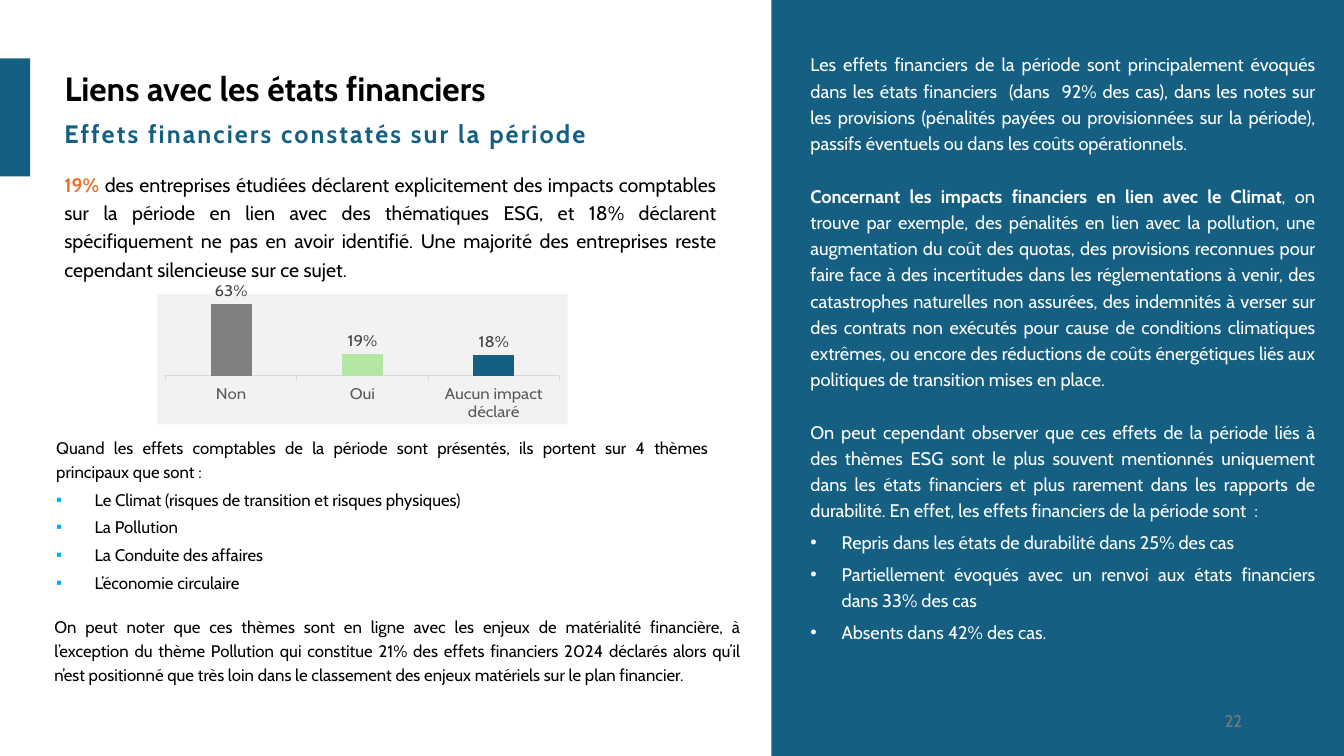
"""Build the slide on financial effects recorded over the period."""
import lxml.etree
import pptx
import pptx.chart.data
import pptx.dml.color
import pptx.enum.chart
import pptx.enum.shapes
import pptx.enum.text
import pptx.oxml
import pptx.oxml.ns
import pptx.util

Inches = pptx.util.Inches
Pt = pptx.util.Pt
Align = pptx.enum.text.PP_ALIGN
qn = pptx.oxml.ns.qn
FONT = "Cabin"
BLUE = "156082"
ORANGE = "E97132"
BLACK = "000000"
WHITE = "FFFFFF"


def paint(target, color):
    """Give a fill or a font a solid colour."""
    if hasattr(target, "solid"):
        target.solid()
        target = target.fore_color
    else:
        target = target.color
    target.rgb = pptx.dml.color.RGBColor.from_string(color)


def write_text(shape, position, paragraphs, size, color, alignment=Align.JUSTIFY,
               bold=False, line_spacing=1.2, indent=0, bullet="•", bullet_color=None,
               lead_color=None):
    """Place a shape and write (lead, body, space after, bulleted) paragraphs."""
    shape.left, shape.top, shape.width, shape.height = map(Inches, position)
    frame = shape.text_frame
    frame.word_wrap = True
    frame.auto_size = pptx.enum.text.MSO_AUTO_SIZE.NONE
    frame.vertical_anchor = pptx.enum.text.MSO_ANCHOR.TOP
    for index, (lead, body, space_after, bulleted) in enumerate(paragraphs):
        paragraph = frame.add_paragraph() if index else frame.paragraphs[0]
        paragraph.alignment = alignment
        paragraph.line_spacing = 1.1 if bulleted and bullet_color else line_spacing
        paragraph.space_before = Pt(0)
        paragraph.space_after = Pt(space_after)
        if bulleted:
            properties = paragraph._p.get_or_add_pPr()
            properties.set("marL", str(Inches(indent)))
            properties.set("indent", str(-Inches(indent)))
            if bullet_color:
                holder = lxml.etree.SubElement(properties, qn("a:buClr"))
                lxml.etree.SubElement(holder, qn("a:srgbClr"), val=bullet_color)
            lxml.etree.SubElement(properties, qn("a:buFont"), typeface="Arial")
            lxml.etree.SubElement(properties, qn("a:buChar"), char=bullet)
        paragraph.font.name = FONT
        paragraph.font.size = Pt(size)
        paragraph.font.bold = bold
        paint(paragraph.font, color)
        if lead:
            run = paragraph.add_run()
            run.text = lead
            run.font.bold = True
            if lead_color:
                paint(run.font, lead_color)
        paragraph.add_run().text = body


presentation = pptx.Presentation()
presentation.slide_width = Inches(13.33)
presentation.slide_height = Inches(7.5)
slide = presentation.slides.add_slide(presentation.slide_layouts[5])

for position in ((0, 0.58, 0.3, 1.17), (7.65, 0, 5.68, 7.5)):
    panel = slide.shapes.add_shape(
        pptx.enum.shapes.MSO_SHAPE.RECTANGLE, *map(Inches, position))
    panel.shadow.inherit = False
    paint(panel.fill, BLUE)
    panel.line.fill.background()

write_text(slide.shapes.title, (0.54, 0.62, 6.01, 0.5),
           [("", "Liens avec les états financiers", 0, False)],
           24, BLACK, Align.LEFT, bold=True, line_spacing=1)

subtitle, page_number, summary, themes, remark, details = [
    slide.shapes.add_textbox(0, 0, 0, 0) for _ in range(6)]

write_text(subtitle, (0.54, 1.12, 6.8, 0.4),
           [("", "Effets financiers constatés sur la période", 0, False)],
           18, BLUE, Align.LEFT, bold=True, line_spacing=1)
subtitle.text_frame.paragraphs[0].runs[0]._r.get_or_add_rPr().set("spc", "150")

write_text(page_number, (9.42, 6.95, 3, 0.4), [("", "22", 0, False)],
           12, "797979", Align.RIGHT, line_spacing=1)
page_number.text_frame.vertical_anchor = pptx.enum.text.MSO_ANCHOR.MIDDLE

write_text(summary, (0.54, 1.62, 6.67, 1.54), [
    ("19% ", "des entreprises étudiées déclarent explicitement des impacts comptables sur la "
     "période en lien avec des thématiques ESG, et 18% déclarent spécifiquement ne pas en avoir "
     "identifié. Une majorité des entreprises reste cependant silencieuse sur ce sujet.",
     0, False)], 14, BLACK, lead_color=ORANGE)

write_text(themes, (0.46, 4.25, 6.67, 1.72), [
    ("", "Quand les effets comptables de la période sont présentés, ils portent sur 4 thèmes "
     "principaux que sont :", 4, False),
    ("", "Le Climat (risques de transition et risques physiques)", 4, True),
    ("", "La Pollution", 4, True),
    ("", "La Conduite des affaires", 4, True),
    ("", "L’économie circulaire", 6, True),
], 12, BLACK, indent=0.38, bullet="▪", bullet_color="00B0F0")

write_text(remark, (0.44, 6.03, 7.01, 1.06), [
    ("", "On peut noter que ces thèmes sont en ligne avec les enjeux de matérialité financière, "
     "à l’exception du thème Pollution qui constitue 21% des effets financiers 2024 déclarés "
     "alors qu’il n’est positionné que très loin dans le classement des enjeux matériels sur le "
     "plan financier.", 0, False)], 12, BLACK)

write_text(details, (7.94, 0.44, 5.2, 6.26), [
    ("", "Les effets financiers de la période sont principalement évoqués dans les états "
     "financiers  (dans  92% des cas), dans les notes sur les provisions (pénalités payées ou "
     "provisionnées sur la période), passifs éventuels ou dans les coûts opérationnels.",
     18.8, False),
    ("Concernant les impacts financiers en lien avec le Climat",
     ", on trouve par exemple, des pénalités en lien avec la pollution, une augmentation du "
     "coût des quotas, des provisions reconnues pour faire face à des incertitudes dans les "
     "réglementations à venir, des catastrophes naturelles non assurées, des indemnités à "
     "verser sur des contrats non exécutés pour cause de conditions climatiques extrêmes, ou "
     "encore des réductions de coûts énergétiques liés aux politiques de transition mises en "
     "place.", 18.8, False),
    ("", "On peut cependant observer que ces effets de la période liés à des thèmes ESG sont le "
     "plus souvent mentionnés uniquement dans les états financiers et plus rarement dans les "
     "rapports de durabilité. En effet, les effets financiers de la période sont  :", 4, False),
    ("", "Repris dans les états de durabilité dans 25% des cas", 4, True),
    ("", "Partiellement évoqués avec un renvoi aux états financiers dans 33% des cas", 4, True),
    ("", "Absents dans 42% des cas.", 0, True),
], 13, WHITE, indent=0.31)

chart_data = pptx.chart.data.CategoryChartData(number_format="0%")
chart_data.categories = ["Non", "Oui", "Aucun impact déclaré"]
chart_data.add_series("Series 1", (0.63, 0.19, 0.18))
chart = slide.shapes.add_chart(
    pptx.enum.chart.XL_CHART_TYPE.COLUMN_CLUSTERED,
    *map(Inches, (1.56, 2.8, 4.07, 1.41)), chart_data).chart
chart.has_title = False
chart.has_legend = False
chart.font.name = FONT
chart.font.size = Pt(10)
paint(chart.font, BLACK)

namespaces = pptx.oxml.ns.nsdecls("c", "a")
chart_element = chart._chartSpace.find(qn("c:chart"))
chart_element.addnext(pptx.oxml.parse_xml(
    f'<c:spPr {namespaces}><a:solidFill><a:srgbClr val="F2F2F2"/></a:solidFill>'
    '<a:ln><a:noFill/></a:ln></c:spPr>'))
plot_area = chart_element.find(qn("c:plotArea"))
for layout in plot_area.findall(qn("c:layout")):
    plot_area.remove(layout)
plot_area.insert(0, pptx.oxml.parse_xml(
    f'<c:layout {namespaces}><c:manualLayout><c:layoutTarget val="inner"/>'
    '<c:xMode val="edge"/><c:yMode val="edge"/><c:x val="0.02"/><c:y val="0.08"/>'
    '<c:w val="0.96"/><c:h val="0.55"/></c:manualLayout></c:layout>'))

value_axis = chart.value_axis
value_axis.visible = False
value_axis.has_major_gridlines = False
value_axis.minimum_scale = 0
value_axis.maximum_scale = 0.63
category_axis = chart.category_axis
category_axis.major_tick_mark = pptx.enum.chart.XL_TICK_MARK.OUTSIDE
category_axis.format.line.width = Pt(0.75)
paint(category_axis.format.line.fill, "D9D9D9")

plot = chart.plots[0]
plot.vary_by_categories = False
plot.gap_width = 219
plot.overlap = -27
plot.has_data_labels = True
labels = plot.data_labels
labels.show_value = True
labels.number_format = "0%"
labels.number_format_is_linked = False
labels.position = pptx.enum.chart.XL_LABEL_POSITION.OUTSIDE_END
for font, color in ((category_axis.tick_labels.font, "595959"), (labels.font, "404040")):
    font.name = FONT
    font.size = Pt(12)
    paint(font, color)

series = plot.series[0]
paint(series.format.fill, BLUE)
for index, color in enumerate(("808080", "B4E5A2")):
    paint(series.points[index].format.fill, color)

presentation.save("out.pptx")
